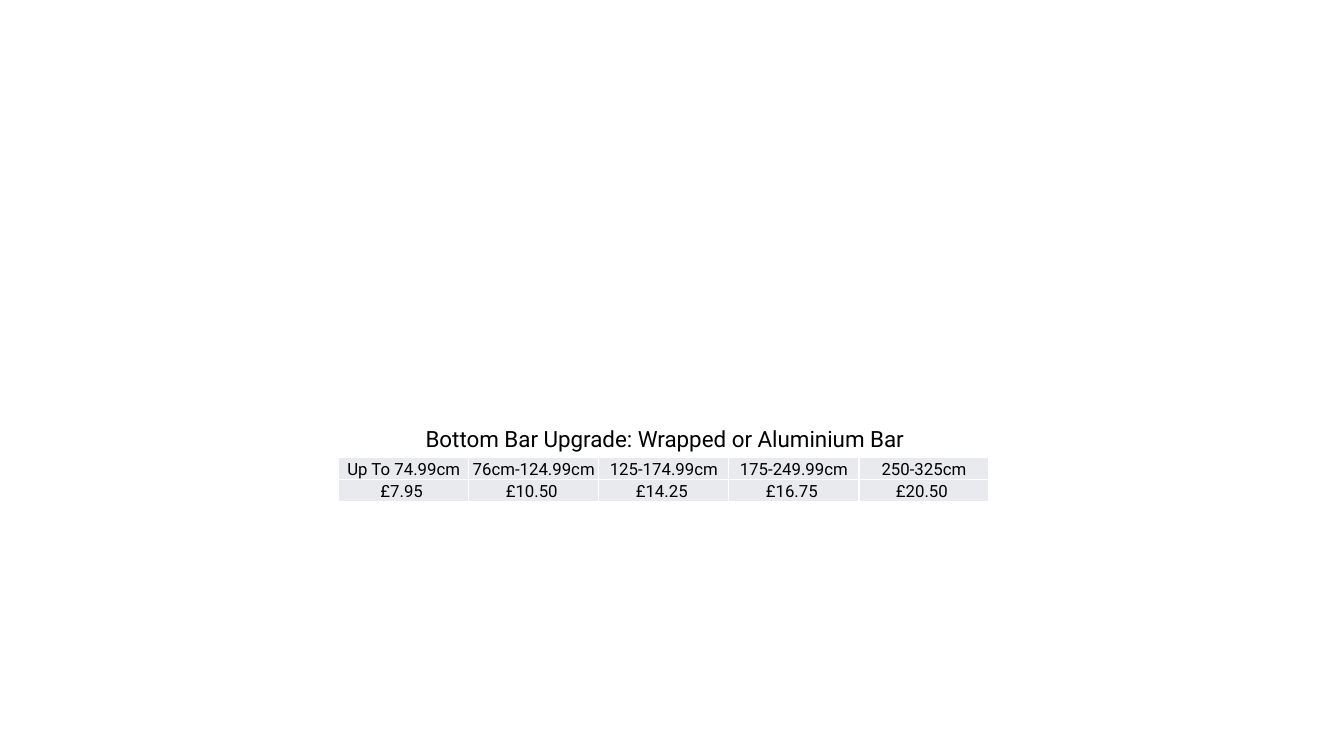
from lxml.etree import SubElement
from pptx import Presentation
from pptx.dml.color import RGBColor
from pptx.enum.text import MSO_ANCHOR, MSO_AUTO_SIZE, PP_ALIGN
from pptx.oxml.ns import qn
from pptx.util import Inches, Pt

COLOURS = {"text": "000000", "cell": "E8EAED", "border": "FFFFFF"}
COLUMN, ROW = 1.29, 0.22
TABLE_LEFT, TABLE_TOP = 3.36, 4.54
TITLE_WIDTH, TITLE_HEIGHT = 5.87, 0.37

PRICES = [
    ("Up To 74.99cm", "£7.95 "),
    ("76cm-124.99cm", "£10.50 "),
    ("125-174.99cm", "£14.25 "),
    ("175-249.99cm", "£16.75 "),
    ("250-325cm", "£20.50 "),
]


def write(frame, text, size):
    frame.text = text
    paragraph = frame.paragraphs[0]
    paragraph.alignment = PP_ALIGN.CENTER
    paragraph.font.name = "Roboto"
    paragraph.font.size = Pt(size)
    paragraph.font.color.rgb = RGBColor.from_string(COLOURS["text"])


def add_borders(cell):
    properties = cell._tc.get_or_add_tcPr()
    for side in ("a:lnL", "a:lnR", "a:lnT", "a:lnB"):
        line = SubElement(properties, qn(side), w=str(Pt(1)))
        fill = SubElement(line, qn("a:solidFill"))
        SubElement(fill, qn("a:srgbClr"), val=COLOURS["border"])


deck = Presentation()
deck.slide_width, deck.slide_height = Inches(13.33), Inches(7.5)
slide = deck.slides.add_slide(deck.slide_layouts[5])

# Heading, directly above the table
heading = slide.shapes.title
heading.left, heading.top = Inches(3.66), Inches(TABLE_TOP - TITLE_HEIGHT)
heading.width, heading.height = Inches(TITLE_WIDTH), Inches(TITLE_HEIGHT)
heading.text_frame.word_wrap = True
heading.text_frame.auto_size = MSO_AUTO_SIZE.SHAPE_TO_FIT_TEXT
heading.text_frame.vertical_anchor = MSO_ANCHOR.TOP
write(heading.text_frame, "Bottom Bar Upgrade: Wrapped or Aluminium Bar", 16)

# Price table: widths above, prices below
price_table = slide.shapes.add_table(
    2, len(PRICES), Inches(TABLE_LEFT), Inches(TABLE_TOP),
    Inches(COLUMN * len(PRICES)), Inches(ROW * 2)).table
price_table.first_row = False
price_table.horz_banding = False
for row in price_table.rows:
    row.height = Inches(ROW)

for column, entries in enumerate(PRICES):
    price_table.columns[column].width = Inches(COLUMN)
    for row, entry in enumerate(entries):
        cell = price_table.cell(row, column)
        cell.margin_left = cell.margin_right = cell.margin_top = Inches(0.01)
        cell.margin_bottom = 0
        cell.vertical_anchor = MSO_ANCHOR.BOTTOM
        add_borders(cell)
        cell.fill.solid()
        cell.fill.fore_color.rgb = RGBColor.from_string(COLOURS["cell"])
        write(cell.text_frame, entry, 12)

deck.save("out.pptx")
